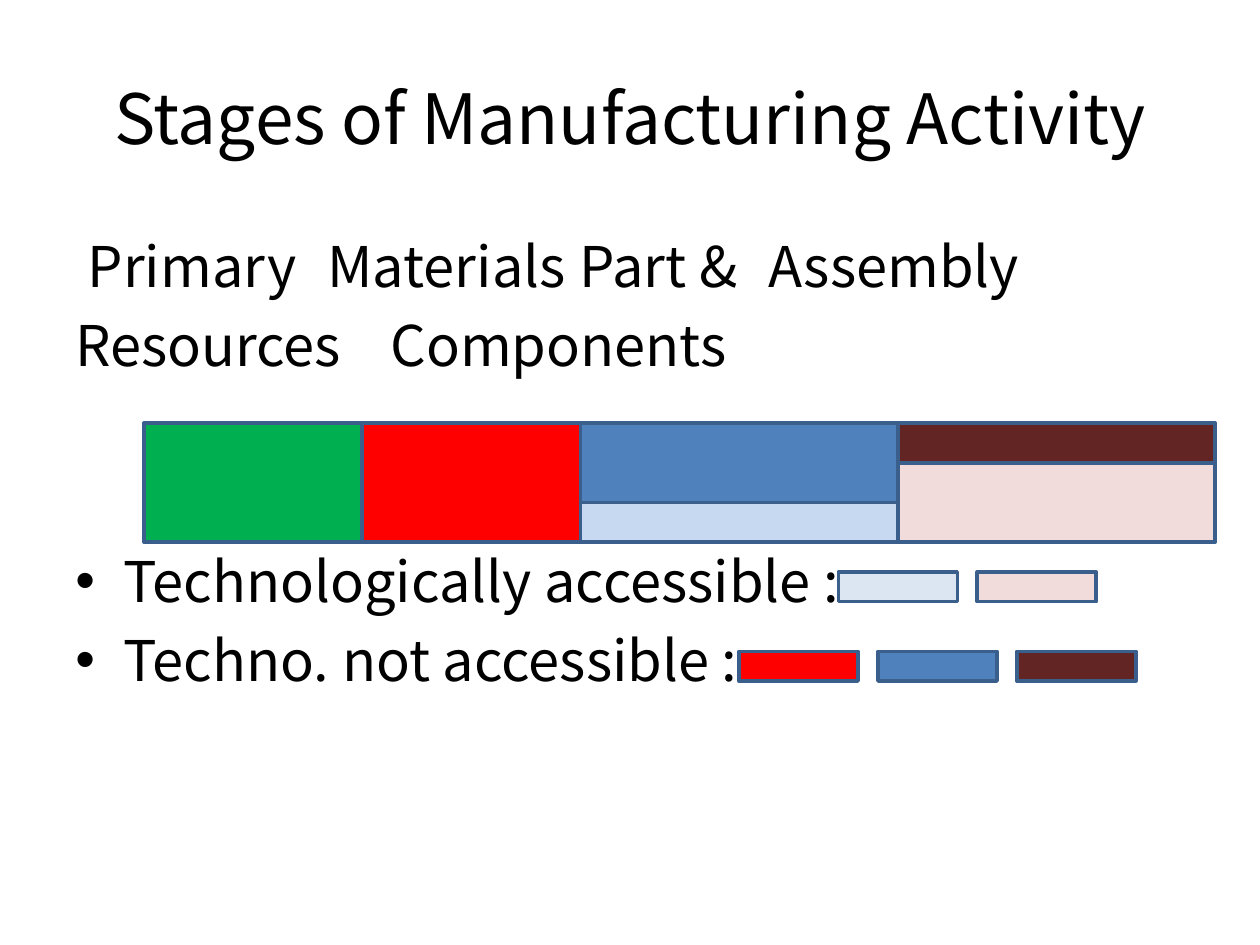
from lxml import etree
from pptx import Presentation
from pptx.dml.color import RGBColor
from pptx.enum.shapes import MSO_SHAPE
from pptx.enum.text import MSO_ANCHOR, PP_ALIGN
from pptx.oxml.ns import qn
from pptx.util import Cm, Pt

RECTANGLE = MSO_SHAPE.RECTANGLE
MIDDLE = MSO_ANCHOR.MIDDLE
CENTER = PP_ALIGN.CENTER

FONT = "Noto Sans CJK KR"
BLACK = RGBColor(0x00, 0x00, 0x00)
OUTLINE = RGBColor(0x3A, 0x5F, 0x8C)
GREEN = RGBColor(0x00, 0xB0, 0x50)
RED = RGBColor(0xFF, 0x00, 0x00)
BLUE = RGBColor(0x4F, 0x81, 0xBD)
LIGHT_BLUE = RGBColor(0xC6, 0xD9, 0xF1)
PALE_BLUE = RGBColor(0xDC, 0xE6, 0xF2)
MAROON = RGBColor(0x63, 0x25, 0x23)
PINK = RGBColor(0xF2, 0xDC, 0xDB)


def add_block(left, top, width, height, color):
    block = page.shapes.add_shape(RECTANGLE, Cm(left), Cm(top), Cm(width), Cm(height))
    block.shadow.inherit = False
    block.fill.solid()
    block.fill.fore_color.rgb = color
    block.line.color.rgb = OUTLINE
    block.line.width = Pt(2)


def format_text(para, size):
    for span in para.runs:
        span.font.name = FONT
        span.font.size = Pt(size)
        span.font.color.rgb = BLACK


deck = Presentation()
deck.slide_width = Cm(25.4)
deck.slide_height = Cm(19.05)
page = deck.slides.add_slide(deck.slide_layouts[5])

title = page.shapes.title
title.left, title.top, title.width, title.height = Cm(1.27), Cm(0.76), Cm(22.86), Cm(3.18)
title.text_frame.text = "Stages of Manufacturing Activity"
title.text_frame.vertical_anchor = MIDDLE
title.text_frame.paragraphs[0].alignment = CENTER
format_text(title.text_frame.paragraphs[0], 39.6)

body = page.shapes.add_textbox(Cm(1.27), Cm(4.54), Cm(22.86), Cm(12.5))
body.text_frame.word_wrap = True
body_lines = [
    ("Primary\tMaterials\tPart &\tAssembly", 0, 0.25, [5.19, 10.47, 15.73], None, 0),
    ("Resources\tComponents", 0, 0, [8.86], None, 6.4),
    ("Technologically accessible :", 0.97, -0.97, [], "•", 96.4),
    ("Techno. not accessible :", 0.97, -0.97, [], "•", 6.4),
]
body.text_frame.text = "\n".join(line[0] for line in body_lines)
for para, (_, margin, indent, tabs, bullet, before) in zip(body.text_frame.paragraphs, body_lines):
    para.line_spacing = Pt(38.6)
    para.space_before = Pt(before)
    properties = para._p.get_or_add_pPr()
    properties.set("marL", str(Cm(margin)))
    properties.set("indent", str(Cm(indent)))
    if bullet:
        etree.SubElement(properties, qn("a:buFont"), typeface="Arial")
        etree.SubElement(properties, qn("a:buChar"), char=bullet)
    if tabs:
        tab_list = etree.SubElement(properties, qn("a:tabLst"))
        for tab in tabs:
            etree.SubElement(tab_list, qn("a:tab"), pos=str(Cm(tab)), algn="l")
    format_text(para, 32)

UNIT = 0.8
stages = [
    (4.4, [(3, GREEN)]),
    (4.4, [(3, RED)]),
    (6.4, [(2, BLUE), (1, LIGHT_BLUE)]),
    (6.4, [(1, MAROON), (2, PINK)]),
]
left = 2.9
for width, layers in stages:
    top = 8.53
    for units, color in layers:
        add_block(left, top, width, units * UNIT, color)
        top += units * UNIT
    left += width

legend_rows = [
    (16.9, 11.53, [PALE_BLUE, PINK]),
    (14.9, 13.13, [RED, BLUE, MAROON]),
]
for left, top, colors in legend_rows:
    for index, color in enumerate(colors):
        add_block(left + index * 2.8, top, 2.4, 0.6, color)

deck.save("out.pptx")
